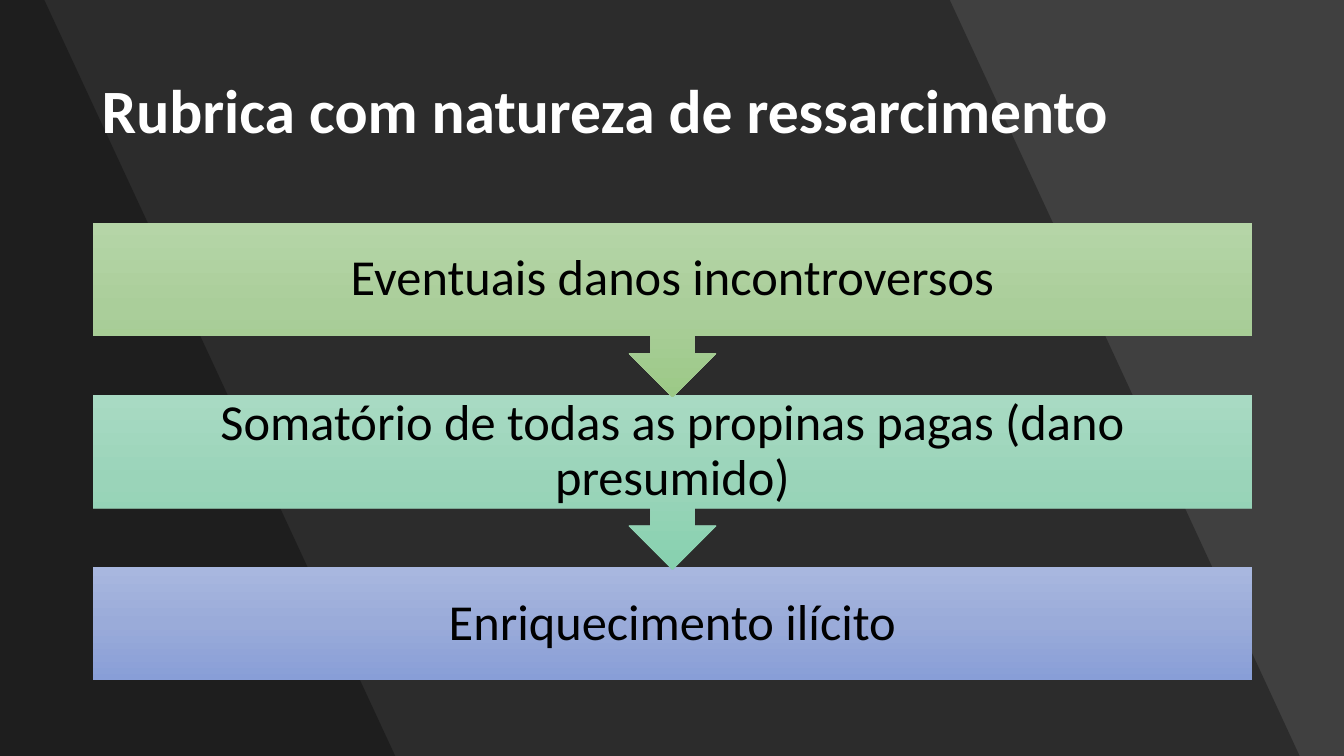
import copy
from dataclasses import dataclass

import pptx
import pptx.dml.color
import pptx.enum.shapes
import pptx.enum.text
import pptx.oxml
import pptx.oxml.ns
import pptx.util

WIDTH, HEIGHT = 13.33, 7.5
RGB = pptx.dml.color.RGBColor.from_string
SHAPES = pptx.enum.shapes.MSO_SHAPE
ALIGN = pptx.enum.text.PP_ALIGN


@dataclass(frozen=True)
class Theme:
    font: str = "Calibri"
    background: str = "404040"
    band: str = "000000"
    band_opacity: int = 30
    title_color: str = "FFFFFF"
    title_size: int = 44
    step_color: str = "000000"
    step_size: int = 36


THEME = Theme()

# Wording and top, middle and bottom gradient colours of each step
STEPS = [
    ("Eventuais danos incontroversos", ("B5D5A7", "AACE9A", "9CC987")),
    ("Somatório de todas as propinas pagas (dano presumido)", ("A8DAC3", "9AD4B9", "87D1AF")),
    ("Enriquecimento ilícito", ("A8B7DF", "9AABD9", "889ED7")),
]


def inches(*lengths):
    return [pptx.util.Inches(length) for length in lengths]


def add_band(slide, top_right, bottom_right):
    """Translucent band from the left edge to a slanted right side."""
    corners = [(top_right, 0), (bottom_right, HEIGHT), (0, HEIGHT)]
    builder = slide.shapes.build_freeform(0, 0)
    builder.add_line_segments([inches(*corner) for corner in corners], close=True)
    band = builder.convert_to_shape()
    band.shadow.inherit = False
    band.line.fill.background()
    band.fill.solid()
    band.fill.fore_color.rgb = RGB(THEME.band)
    color = band._element.spPr.find(".//" + pptx.oxml.ns.qn("a:srgbClr"))
    alpha = pptx.oxml.parse_xml(
        f'<a:alpha {pptx.oxml.ns.nsdecls("a")} val="{THEME.band_opacity * 1000}"/>')
    color.append(alpha)


def add_text(slide, box, text, size, color, bold=False, align=None, inset=None, space_after=6):
    text_box = slide.shapes.add_textbox(*inches(*box))
    frame = text_box.text_frame
    frame.word_wrap = True
    frame.vertical_anchor = pptx.enum.text.MSO_ANCHOR.MIDDLE
    if inset is not None:
        frame.margin_left = frame.margin_right = pptx.util.Inches(inset)
        frame.margin_top = frame.margin_bottom = pptx.util.Inches(inset)
    paragraph = frame.paragraphs[0]
    paragraph.alignment = align
    paragraph.line_spacing = 0.9
    paragraph.space_after = pptx.util.Pt(space_after)
    run = paragraph.add_run()
    run.text = text
    run.font.name = THEME.font
    run.font.size = pptx.util.Pt(size)
    run.font.bold = bold
    run.font.color.rgb = RGB(color)


def fill_gradient(shape, colors):
    """Vertical gradient with evenly spaced stops, kept upright on turned shapes."""
    shape.fill.gradient()
    shape.fill.gradient_angle = 270
    gradient = shape._element.spPr.find(pptx.oxml.ns.qn("a:gradFill"))
    gradient.set("rotWithShape", "0")
    stop_list = gradient.find(pptx.oxml.ns.qn("a:gsLst"))
    while len(stop_list) < len(colors):
        stop_list.append(copy.deepcopy(stop_list[0]))
    for index, (stop, color) in enumerate(zip(shape.fill.gradient_stops, colors)):
        stop.position = index / (len(colors) - 1)
        stop.color.rgb = RGB(color)


def add_step(slide, box, text, colors, arrow_height):
    """One step of the flow; a positive arrow height adds an arrow below."""
    left, top, width, height = box
    kind = SHAPES.UP_ARROW_CALLOUT if arrow_height else SHAPES.RECTANGLE
    full_height = height + arrow_height
    shape = slide.shapes.add_shape(kind, *inches(left, top, width, full_height))
    if arrow_height:
        shape.rotation = 180
        shape.adjustments[3] = height / full_height
    shape.shadow.inherit = False
    shape.line.fill.background()
    fill_gradient(shape, colors)
    add_text(slide, box, text, THEME.step_size, THEME.step_color,
             align=ALIGN.CENTER, inset=0.28, space_after=0.35 * THEME.step_size)


def add_flow(slide, box):
    """Equal steps stacked in the box, drawn from the last to the first."""
    left, top, width, height = box
    step_height = 1.12
    pitch = (height - step_height) / (len(STEPS) - 1)
    arrow = pitch - step_height + 0.02
    for index, (text, colors) in reversed(list(enumerate(STEPS))):
        step_box = (left, top + index * pitch, width, step_height)
        add_step(slide, step_box, text, colors, arrow if index < len(STEPS) - 1 else 0)


def main():
    presentation = pptx.Presentation()
    presentation.slide_width, presentation.slide_height = inches(WIDTH, HEIGHT)
    slide = presentation.slides.add_slide(presentation.slide_layouts[6])

    # Background
    slide.background.fill.solid()
    slide.background.fill.fore_color.rgb = RGB(THEME.background)
    add_band(slide, 9.42, 12.89)
    add_band(slide, 0.44, 3.92)

    # Title
    add_text(slide, (0.91, 0.4, 11.51, 1.45), "Rubrica com natureza de ressarcimento",
             THEME.title_size, THEME.title_color, bold=True)

    # Flow of steps
    add_flow(slide, (0.92, 2.21, 11.5, 4.54))

    presentation.save("out.pptx")


if __name__ == "__main__":
    main()
